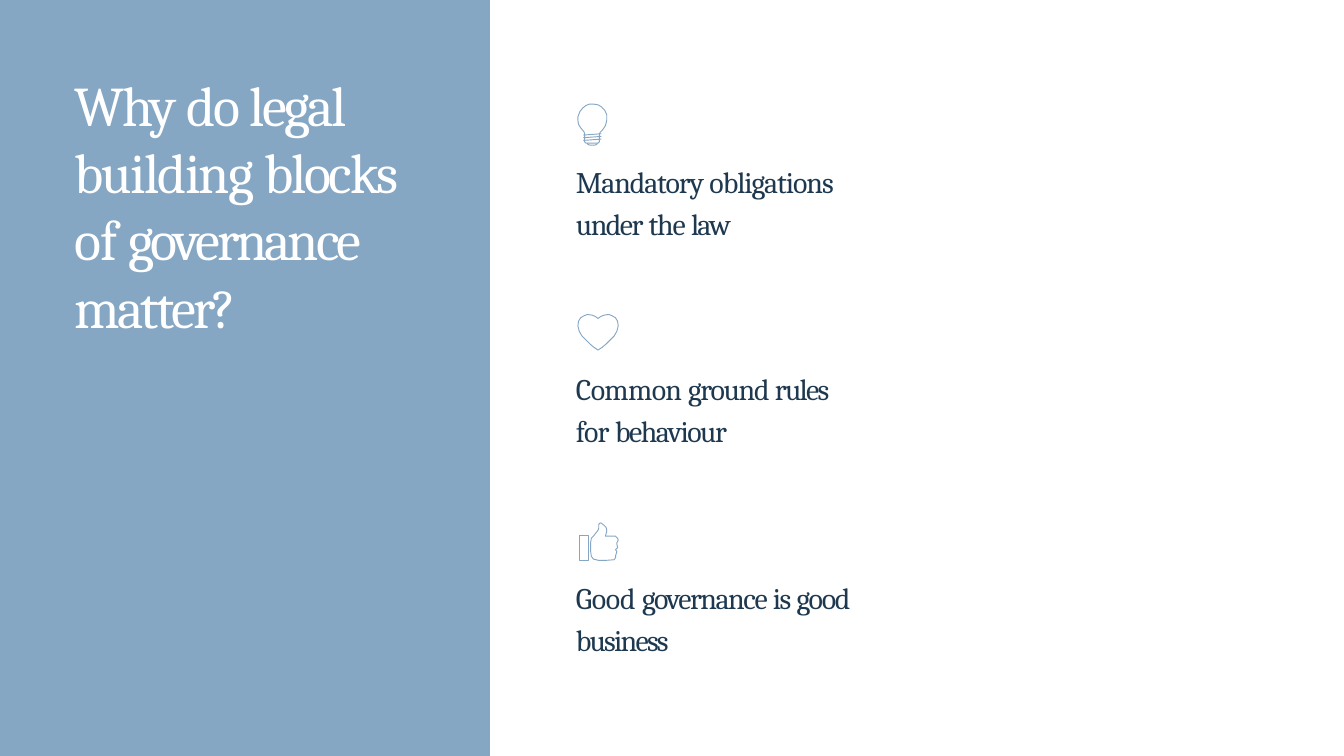
"""Build the slide on why the legal building blocks of governance matter."""
from pptx import Presentation
from pptx.dml.color import RGBColor
from pptx.enum import shapes, text
from pptx.util import Inches, Pt

STEEL = RGBColor(0x86, 0xA7, 0xC4)
NAVY = RGBColor(0x1D, 0x38, 0x4F)
WHITE = RGBColor(0xFF, 0xFF, 0xFF)
HUNDREDTH = Inches(0.01)

QUESTION = [("Why ", -2.4), ("do ", -2.8), ("legal ", -2.6), ("building ", -1.9),
            ("blocks ", -2.5), ("of ", -1.4), ("governance ", -3.3), ("matter?", -3)]
REASONS = [
    (2.33, 4.01, [("Mandatory ", -1.2), ("obligations ", -1.1), ("under ", -1.6),
                  ("the ", -1.3), ("law", -1.9)]),
    (5.41, 3.99, [("Common ", -0.7), ("ground ", -1.4), ("rules ", -1.8),
                  ("for ", -0.9), ("behaviour", -1.6)]),
    (8.52, 4.44, [("Good ", -0.2), ("governance ", -1.6), ("is ", -1.5),
                  ("good ", -1.4), ("business", -1.9)]),
]

BULB = [(11, 57), (11, 45), (10, 42), (5, 36), (2, 31), (1, 25), (1, 20), (4, 12),
        (8, 7), (13, 3), (18, 1), (25, 1), (31, 2), (36, 5), (41, 10), (44, 17),
        (44, 25), (42, 33), (38, 39), (34, 43), (33, 46), (33, 57), (31, 59), (13, 59)]
BULB_CAP = [(15, 59), (16, 61), (19, 62), (26, 62), (29, 61), (30, 59)]
BULB_THREADS = [[(9, y), (36, y - 2)] for y in (47, 51, 55)]
HALF_HEART = [(31, 7), (27, 4), (22, 2), (15, 1), (10, 3), (5, 6), (2, 11), (1, 18),
              (3, 26), (7, 33), (13, 39), (19, 45), (25, 50), (31, 54)]
HEART = HALF_HEART + [(62 - x, y) for x, y in HALF_HEART[-2:0:-1]]
CUFF = [(1, 20), (14, 20), (14, 57), (1, 57)]
THUMB = [(19, 24), (22, 21), (29, 12), (30, 9), (30, 4), (31, 2), (33, 1), (37, 4),
         (41, 8), (42, 13), (40, 21), (55, 21), (58, 24), (59, 27), (57, 31), (57, 33),
         (58, 38), (55, 41), (57, 44), (56, 47), (55, 50), (55, 53), (53, 56), (40, 57),
         (30, 57), (22, 55), (19, 51), (18, 44), (18, 30)]


def add_panel(slide):
    """Fill the left side with a plain coloured panel."""
    panel = slide.shapes.add_shape(shapes.MSO_SHAPE.RECTANGLE, 0, 0, Inches(7.29), Inches(11.25))
    panel.shadow.inherit = False
    panel.fill.solid()
    panel.fill.fore_color.rgb = STEEL
    panel.line.fill.background()


def add_words(slide, left, top, width, height, words, size, color, spacing=1.0):
    """Add one paragraph whose words each carry their own letter spacing in points."""
    box = slide.shapes.add_textbox(Inches(left), Inches(top), Inches(width), Inches(height))
    frame = box.text_frame
    frame.word_wrap = True
    frame.auto_size = text.MSO_AUTO_SIZE.NONE
    frame.margin_left = frame.margin_right = frame.margin_bottom = 0
    frame.margin_top = Inches(0.01)
    paragraph = frame.paragraphs[0]
    paragraph.line_spacing = spacing
    for word, tracking in words:
        run = paragraph.add_run()
        run.text = word
        run.font.name = "Cambria"
        run.font.size = Pt(size)
        run.font.color.rgb = color
        run.font._element.set("spc", str(round(tracking * 100)))


def add_icon(slide, left, top, closed, strokes=()):
    """Draw closed outlines and open strokes given in hundredths of an inch."""
    outlines = [(points, True) for points in closed] + [(points, False) for points in strokes]
    (first, first_closed), *others = outlines
    builder = slide.shapes.build_freeform(*first[0], scale=HUNDREDTH)
    builder.add_line_segments(first[1:], close=first_closed)
    for points, is_closed in others:
        builder.move_to(*points[0])
        builder.add_line_segments(points[1:], close=is_closed)
    icon = builder.convert_to_shape(Inches(left), Inches(top))
    icon.shadow.inherit = False
    icon.fill.background()
    icon.line.color.rgb = STEEL
    icon.line.width = Pt(1)


def main():
    """Build and save the slide."""
    deck = Presentation()
    deck.slide_width, deck.slide_height = Inches(20), Inches(11.25)
    slide = deck.slides.add_slide(deck.slide_layouts[6])
    add_panel(slide)
    add_words(slide, 1.11, 1.04, 5.04, 4.03, QUESTION, 60, WHITE)
    for top, width, words in REASONS:
        add_words(slide, 8.57, top, width, 1.28, words, 32, NAVY, 1.17)
    add_icon(slide, 8.59, 1.54, [BULB], [BULB_CAP, *BULB_THREADS])
    add_icon(slide, 8.59, 4.67, [HEART])
    add_icon(slide, 8.61, 7.77, [CUFF, THUMB])
    deck.save("out.pptx")


if __name__ == "__main__":
    main()
